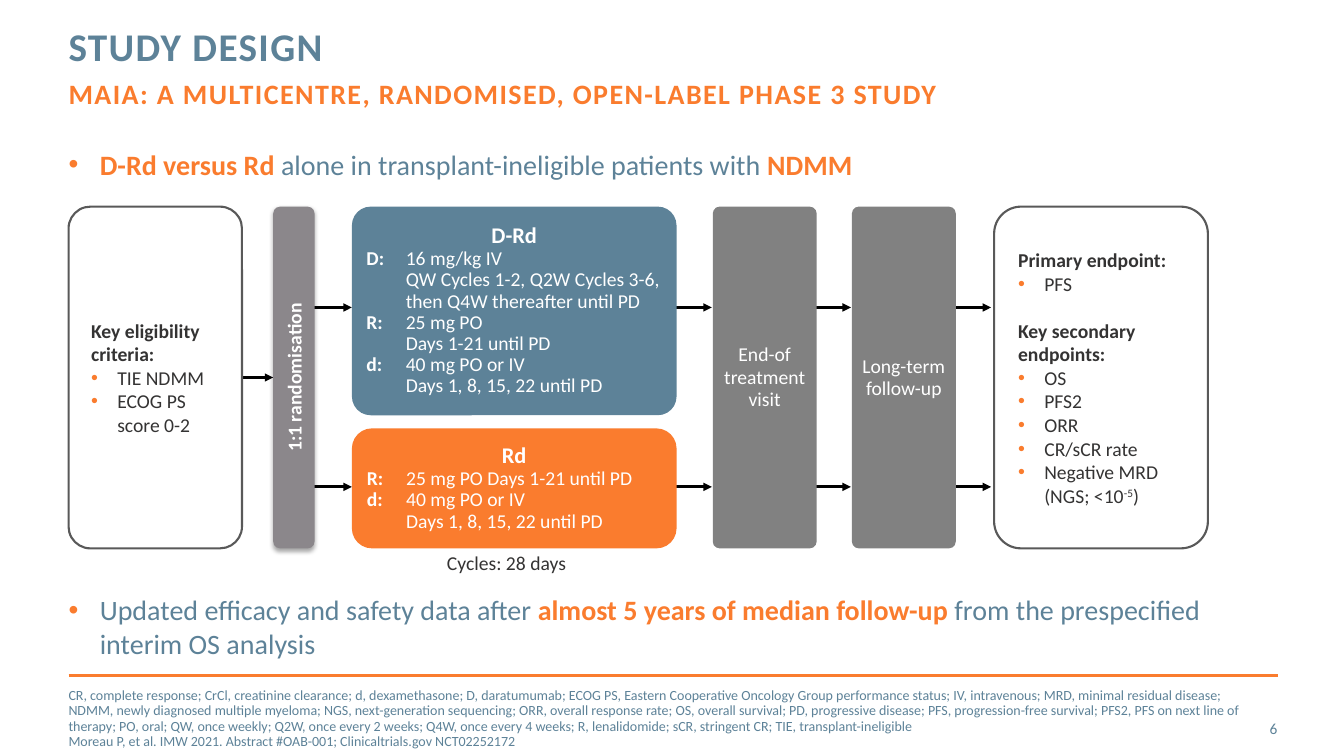
import pptx
import pptx.util
import pptx.dml.color
import pptx.enum.shapes
import pptx.enum.text
import pptx.oxml.ns
import lxml.etree

Inches = pptx.util.Inches
Pt = pptx.util.Pt
RGB = pptx.dml.color.RGBColor
SHAPE = pptx.enum.shapes.MSO_SHAPE
ALIGN = pptx.enum.text.PP_ALIGN
ANCHOR = pptx.enum.text.MSO_ANCHOR
qn = pptx.oxml.ns.qn
child = lxml.etree.SubElement

BLUE = RGB(0x5D, 0x82, 0x98)
ORANGE = RGB(0xFA, 0x7C, 0x2E)
DARK = RGB(0x34, 0x33, 0x33)
EDGE = RGB(0x59, 0x59, 0x59)
GREY = RGB(0x81, 0x81, 0x81)
MAUVE = RGB(0x8B, 0x87, 0x8B)
WHITE = RGB(255, 255, 255)
BLACK = RGB(0, 0, 0)


def para(frame, parts, size, ink, bold=False, align=ALIGN.LEFT,
         space=None, before=0, hang=0, dot=False):
    first = frame.paragraphs[0]
    p = frame.add_paragraph() if first.runs else first
    props = p._p.get_or_add_pPr()
    if hang:
        props.set("marL", str(Inches(hang)))
        props.set("indent", str(-Inches(hang)))
    if dot:
        tint = child(props, qn("a:buClr"))
        child(tint, qn("a:srgbClr"), val=str(ORANGE))
        child(props, qn("a:buFont"), typeface="Arial")
        child(props, qn("a:buChar"), char="•")
    p.alignment = align
    if space:
        p.line_spacing = space
    if before:
        p.space_before = Pt(before)
    font = p.font
    font.name, font.size = "Calibri", Pt(size)
    font.color.rgb = ink
    if isinstance(parts, str):
        font.bold = bold
        parts = [(parts, None, None)]
    for text, heavy, tint in parts:
        for i, line in enumerate(text.split("\n")):
            if i:
                p.add_line_break()
            run = p.add_run()
            run.text = line
            if heavy is not None:
                run.font.bold = heavy
            if tint is not None:
                run.font.color.rgb = tint
    return p


def setup(shape, pad=(0, 0), anchor=ANCHOR.TOP):
    frame = shape.text_frame
    frame.word_wrap = True
    frame.vertical_anchor = anchor
    frame.margin_left = frame.margin_right = Inches(pad[0])
    frame.margin_top = frame.margin_bottom = Inches(pad[1])
    return frame


def label(slide, box, anchor=ANCHOR.TOP):
    return setup(slide.shapes.add_textbox(*map(Inches, box)), anchor=anchor)


def panel(slide, box, fill, curve, pad, edge=None):
    shape = slide.shapes.add_shape(SHAPE.ROUNDED_RECTANGLE, *map(Inches, box))
    shape.adjustments[0] = curve
    shape.shadow.inherit = False
    shape.fill.solid()
    shape.fill.fore_color.rgb = fill
    if edge is None:
        shape.line.fill.background()
    else:
        shape.line.color.rgb = edge
        shape.line.width = Pt(1.5)
    return shape, setup(shape, pad, ANCHOR.MIDDLE)


def rule(slide, x, y, end, ink, arrow=False):
    line = slide.shapes.add_connector(
        pptx.enum.shapes.MSO_CONNECTOR.STRAIGHT,
        Inches(x), Inches(y), Inches(end), Inches(y))
    line.line.color.rgb = ink
    line.line.width = Pt(2)
    props = line._element.spPr
    if arrow:
        child(props.find(qn("a:ln")), qn("a:tailEnd"), type="triangle")
    child(props, qn("a:effectLst"))


def head(slide, x, y):
    rows = ((y, 0.5, "STUDY DESIGN", 28, BLUE, Pt(30)),
            (y + 0.49, 0.4,
             "MAIA: A MULTICENTRE, RANDOMISED, OPEN-LABEL PHASE 3 STUDY",
             20, ORANGE, None))
    for top, high, text, size, ink, space in rows:
        frame = label(slide, (x, top, 12, high))
        p = para(frame, text, size, ink, bold=True, space=space)
        p.runs[0]._r.get_or_add_rPr().set("spc", "100")


def point(slide, box, parts):
    para(label(slide, box), parts, 20, BLUE, hang=0.31, dot=True)


def card(slide, box, groups):
    frame = panel(slide, box, WHITE, 0.126, (0.16, 0.19), EDGE)[1]
    for i, (title, items) in enumerate(groups):
        para(frame, title, 14, DARK, bold=True, before=17 if i else 0)
        for item in items:
            p = para(frame, item, 14, DARK, hang=0.26, dot=True)
    return p


def arm(slide, box, fill, curve, title, doses):
    frame = panel(slide, box, fill, curve, (0.09, 0.09))[1]
    para(frame, title, 16, WHITE, bold=True, align=ALIGN.CENTER, space=0.9)
    for drug, dose in doses:
        para(frame, [(drug + ":\t", True, None), (dose, False, None)],
             14, WHITE, space=0.9, hang=0.39)


def stage(slide, box, text):
    frame = panel(slide, box, GREY, 0.066, (0.07, 0))[1]
    para(frame, text, 14, WHITE, align=ALIGN.CENTER, space=0.95)


def split(slide, x, y, wide, high):
    box = (x + (wide - high) / 2, y + (high - wide) / 2, high, wide)
    bar, frame = panel(slide, box, MAUVE, 0.167, (0.1, 0.05))
    bar.rotation = 270
    para(frame, "1:1 randomisation", 14, WHITE, bold=True, align=ALIGN.CENTER)
    cast = child(bar._element.spPr.find(qn("a:effectLst")), qn("a:outerShdw"),
                 blurRad=str(Pt(3.1)), dist=str(Pt(1.8)), dir="5400000",
                 rotWithShape="0")
    tint = child(cast, qn("a:srgbClr"), val=str(BLACK))
    child(tint, qn("a:alpha"), val="35000")


def flow(slide, x, y, high):
    rule(slide, x + 1.64, y + high / 2, x + 2.03, BLACK, True)
    for start in (2.41, 5.98, 7.36, 8.75):
        for drop in (1, 2.78):
            rule(slide, x + start, y + drop, x + start + 0.4, BLACK, True)
    card(slide, (x, y, 1.72, high),
         [("Key eligibility criteria:", ["TIE NDMM", "ECOG PS score 0-2"])])
    split(slide, x + 2.03, y, 0.41, high)
    tail = ("d", "40 mg PO or IV\nDays 1, 8, 15, 22 until PD")
    arm(slide, (x + 2.81, y, 3.22, 2.07), BLUE, 0.09, "D-Rd",
        [("D", "16 mg/kg IV\nQW Cycles 1-2, Q2W Cycles 3-6,\n"
               "then Q4W thereafter until PD"),
         ("R", "25 mg PO\nDays 1-21 until PD"), tail])
    arm(slide, (x + 2.81, y + 2.2, 3.22, high - 2.2), ORANGE, 0.167, "Rd",
        [("R", "25 mg PO Days 1-21 until PD"), tail])
    stage(slide, (x + 6.39, y, 1.03, high), "End-of treatment visit")
    stage(slide, (x + 7.77, y, 1.03, high), "Long-term follow-up")
    mrd = [("Negative MRD (NGS; <10", None, None), ("-5", None, None),
           (")", None, None)]
    last = card(slide, (x + 9.18, y, 2.12, high),
                [("Primary endpoint:", ["PFS"]),
                 ("Key secondary endpoints:",
                  ["OS", "PFS2", "ORR", "CR/sCR rate", mrd])])
    last.runs[1]._r.get_or_add_rPr().set("baseline", "30000")
    note = label(slide, (x + 3.63, y + high + 0.04, 1.43, 0.22))
    para(note, "Cycles: 28 days", 14, DARK, align=ALIGN.CENTER, space=0.95)


def foot(slide, x, y):
    rule(slide, x, y, x + 12, ORANGE)
    frame = label(slide, (x, y + 0.23, 11.84, 0.4), ANCHOR.MIDDLE)
    para(frame,
         "CR, complete response; CrCl, creatinine clearance; d, dexamethasone; "
         "D, daratumumab; ECOG PS, Eastern Cooperative Oncology Group "
         "performance status; IV, intravenous; MRD, minimal residual disease; "
         "NDMM, newly diagnosed multiple myeloma; NGS, next-generation "
         "sequencing; ORR, overall response rate; OS, overall survival; "
         "PD, progressive disease; PFS, progression-free survival; "
         "PFS2, PFS on next line of therapy; PO, oral; QW, once weekly; "
         "Q2W, once every 2 weeks; Q4W, once every 4 weeks; R, lenalidomide; "
         "sCR, stringent CR; TIE, transplant-ineligible\n"
         "Moreau P, et al. IMW 2021. Abstract #OAB-001; "
         "Clinicaltrials.gov NCT02252172",
         10, BLUE, space=Pt(11))
    page = label(slide, (x + 11.13, y + 0.33, 0.86, 0.4), ANCHOR.MIDDLE)
    para(page, "6", 11, BLUE, align=ALIGN.RIGHT)


def main():
    deck = pptx.Presentation()
    deck.slide_width, deck.slide_height = Inches(13.33), Inches(7.5)
    slide = deck.slides.add_slide(deck.slide_layouts[6])
    left = 0.68
    head(slide, left, 0.27)
    point(slide, (left, 1.46, 11.99, 0.4),
          [("D-Rd versus Rd ", True, ORANGE),
           ("alone in transplant-ineligible patients with ", False, None),
           ("NDMM", True, ORANGE)])
    flow(slide, left, 2.05, 3.39)
    point(slide, (left, 5.88, 11.99, 0.75),
          [("Updated efficacy and safety data after ", False, None),
           ("almost 5 years of median follow-up ", True, ORANGE),
           ("from the prespecified interim OS analysis", False, None)])
    foot(slide, left, 6.7)
    deck.save("out.pptx")


if __name__ == "__main__":
    main()
